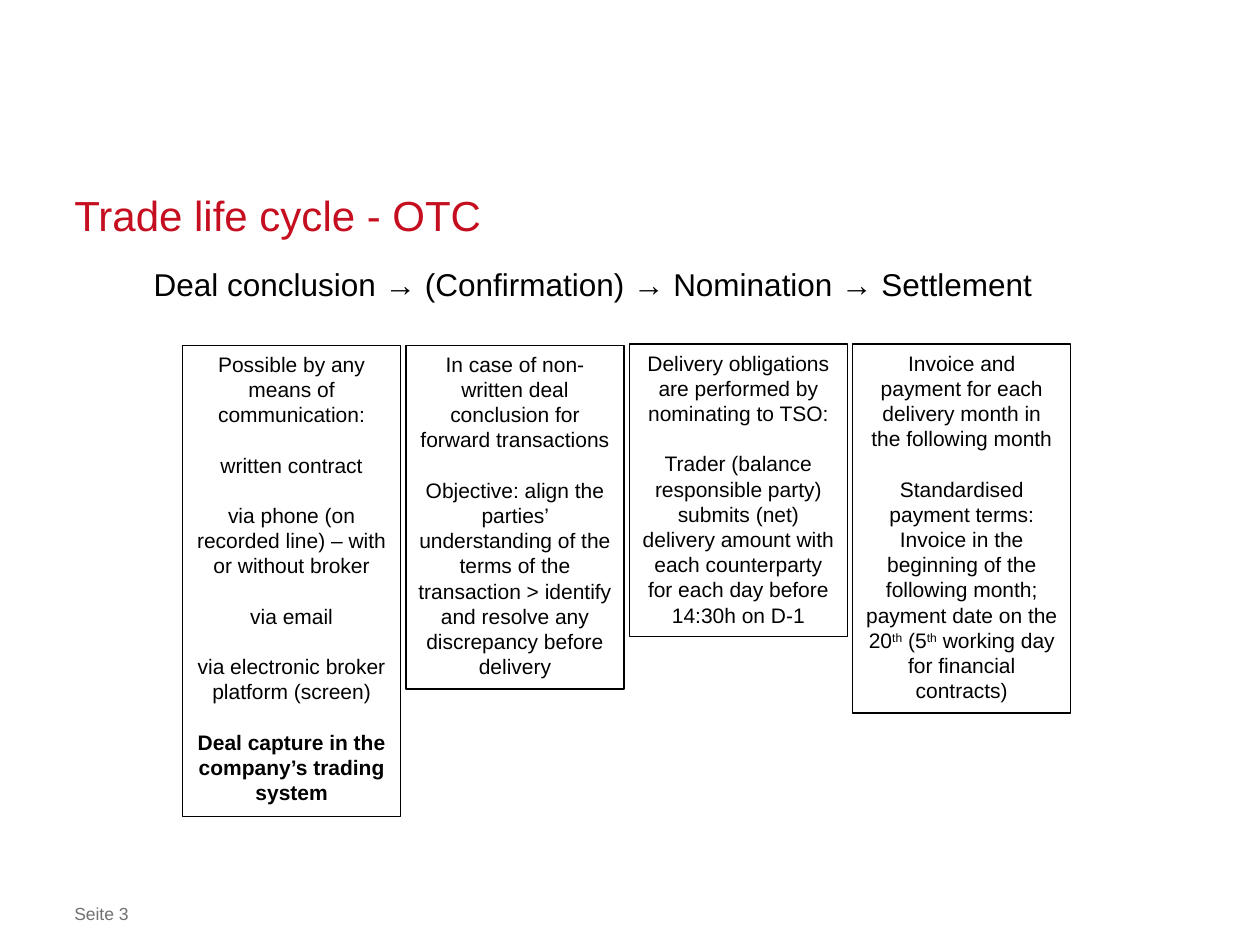
from dataclasses import dataclass

from pptx import Presentation
from pptx.dml.color import RGBColor
from pptx.enum.shapes import MSO_SHAPE
from pptx.enum.text import MSO_ANCHOR, MSO_AUTO_SIZE, PP_ALIGN
from pptx.util import Inches, Pt

RECTANGLE = MSO_SHAPE.RECTANGLE
TOP, BOTTOM = MSO_ANCHOR.TOP, MSO_ANCHOR.BOTTOM
LEFT, CENTER = PP_ALIGN.LEFT, PP_ALIGN.CENTER
GROW = MSO_AUTO_SIZE.SHAPE_TO_FIT_TEXT


@dataclass(frozen=True)
class Theme:
    font: str = "Arial"
    red: RGBColor = RGBColor(0xC5, 0x0E, 0x1F)
    black: RGBColor = RGBColor(0, 0, 0)
    gray: RGBColor = RGBColor(0x71, 0x71, 0x71)
    title: int = 24
    stages: int = 18
    card: int = 12
    footer: int = 10
    card_gap: float = 14.4
    outline: float = 0.75


THEME = Theme()
CARD_LEFT, CARD_STEP, CARD_WIDTH = 1.45, 1.773, 1.73

CARDS = [
    (2.74, 3.74, [
        ("Possible by any means of communication:", {}),
        ("written contract", {"gap": True}),
        ("via phone (on recorded line) – with or without broker", {"gap": True}),
        ("via email", {"gap": True}),
        ("via electronic broker platform (screen)", {"gap": True}),
        ("Deal capture in the company’s trading system", {"gap": True, "bold": True}),
    ]),
    (2.74, 2.73, [
        ("In case of non-written deal conclusion for forward transactions", {}),
        ("Objective: align the parties’ understanding of the terms of the transaction "
         "> identify and resolve any discrepancy before delivery", {"gap": True}),
    ]),
    (2.73, 2.32, [
        ("Delivery obligations are performed by nominating to TSO:", {}),
        ("Trader (balance responsible party) submits (net) delivery amount with each "
         "counterparty for each day before 14:30h on D-1", {"gap": True}),
    ]),
    (2.73, 2.93, [
        ("Invoice and payment for each delivery month in the following month", {}),
        ("Standardised payment terms:", {"gap": True}),
        ("Invoice in the beginning of the following month; payment date on the "
         "20^th^ (5^th^ working day for financial contracts)", {}),
    ]),
]


def write_text(para, text, size, color, bold=False, align=LEFT, leading=None, before=None):
    para.alignment = align
    if leading:
        para.line_spacing = Pt(leading)
    if before:
        para.space_before = Pt(before)
    for index, part in enumerate(text.split("^")):
        span = para.add_run()
        span.text = part
        span.font.name = THEME.font
        span.font.size = Pt(size)
        span.font.bold = bold
        span.font.color.rgb = color
        if index % 2:
            span.font._element.set("baseline", "30000")


def add_label(page, left, top, width, height, text, anchor=TOP, **style):
    box = page.shapes.add_textbox(Inches(left), Inches(top), Inches(width), Inches(height))
    frame = box.text_frame
    frame.word_wrap = True
    frame.vertical_anchor = anchor
    frame.margin_left = frame.margin_right = frame.margin_top = frame.margin_bottom = 0
    write_text(frame.paragraphs[0], text, **style)


def add_card(page, left, top, height, entries):
    card = page.shapes.add_shape(
        RECTANGLE, Inches(left), Inches(top), Inches(CARD_WIDTH), Inches(height))
    card.shadow.inherit = False
    card.fill.background()
    card.line.color.rgb = THEME.black
    card.line.width = Pt(THEME.outline)
    frame = card.text_frame
    frame.word_wrap = True
    frame.auto_size = GROW
    frame.vertical_anchor = TOP
    for index, (text, style) in enumerate(entries):
        para = frame.add_paragraph() if index else frame.paragraphs[0]
        write_text(para, text, THEME.card, THEME.black, align=CENTER,
                   bold=style.get("bold", False),
                   before=THEME.card_gap if style.get("gap") else None)


def main():
    deck = Presentation()
    deck.slide_width, deck.slide_height = Inches(10), Inches(7.5)
    page = deck.slides.add_slide(deck.slide_layouts[6])
    add_label(page, 0.59, 1.51, 8.82, 0.39, "Trade life cycle - OTC",
              anchor=BOTTOM, size=THEME.title, color=THEME.red, leading=30)
    add_label(page, 1.22, 2.1, 7.4, 4.45,
              "Deal conclusion → (Confirmation) → Nomination → Settlement",
              size=THEME.stages, color=THEME.black, leading=22)
    for index, (top, height, entries) in enumerate(CARDS):
        add_card(page, CARD_LEFT + index * CARD_STEP, top, height, entries)
    add_label(page, 0.59, 7.17, 7.24, 0.17, "Seite 3",
              size=THEME.footer, color=THEME.gray)
    deck.save("out.pptx")


if __name__ == "__main__":
    main()
